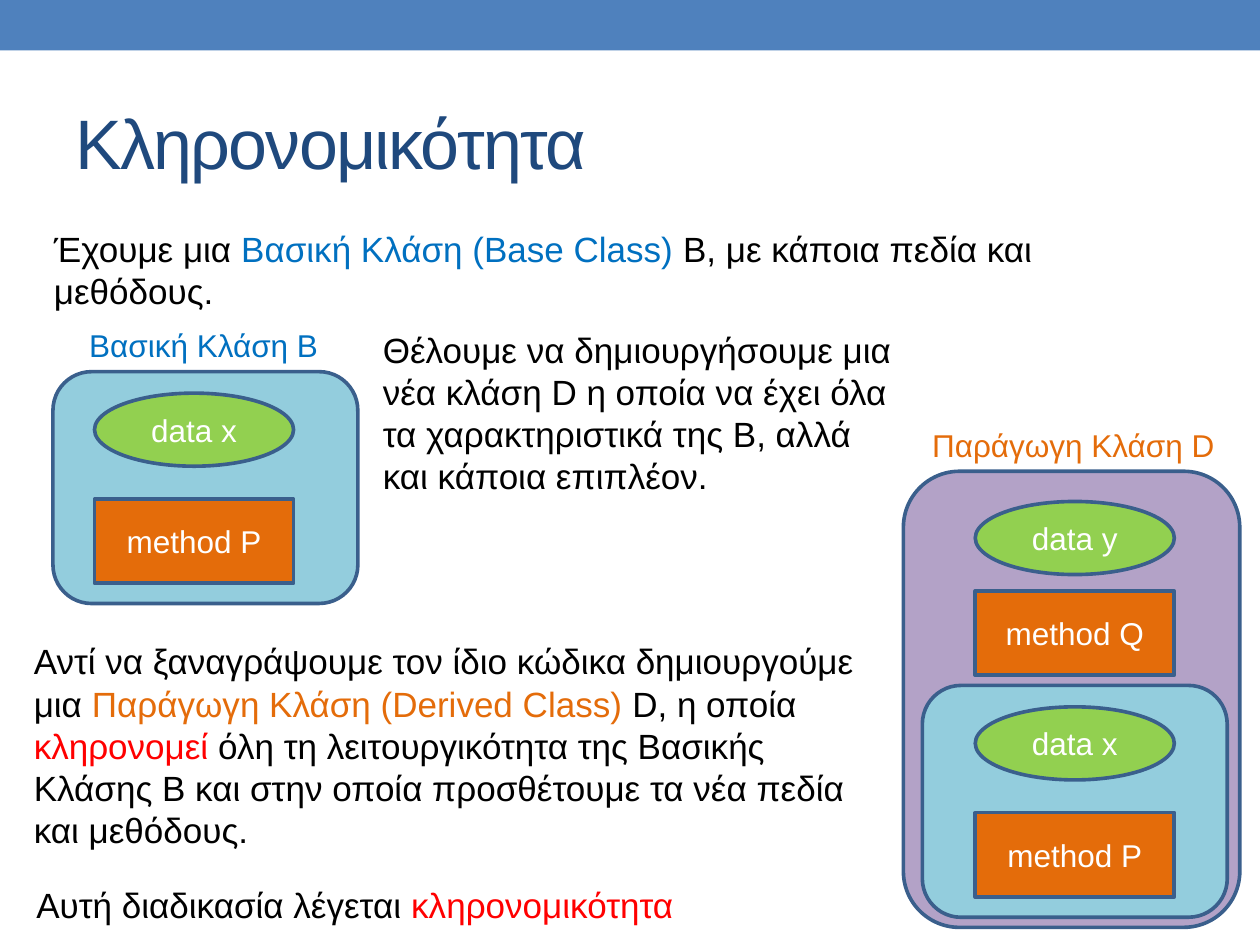
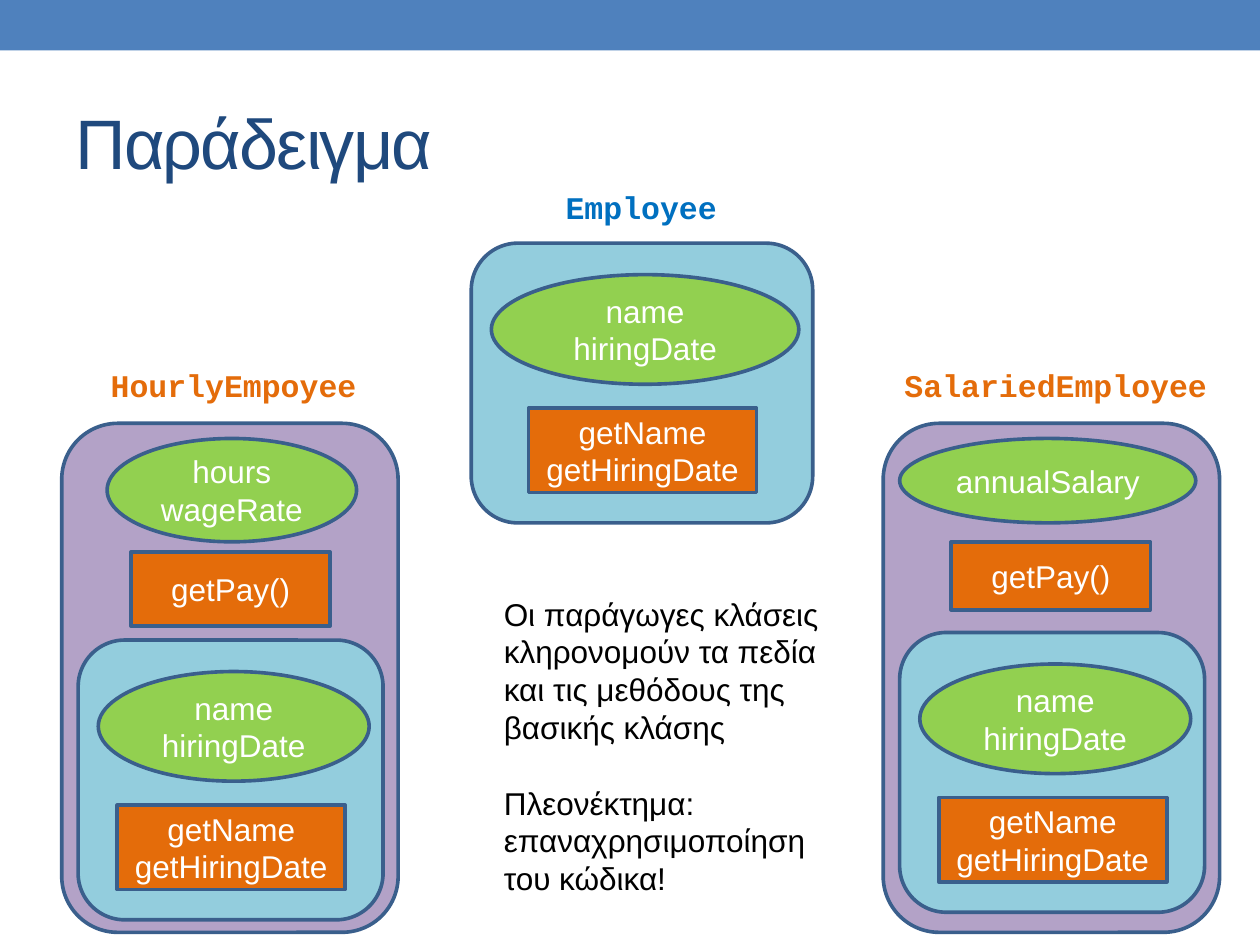
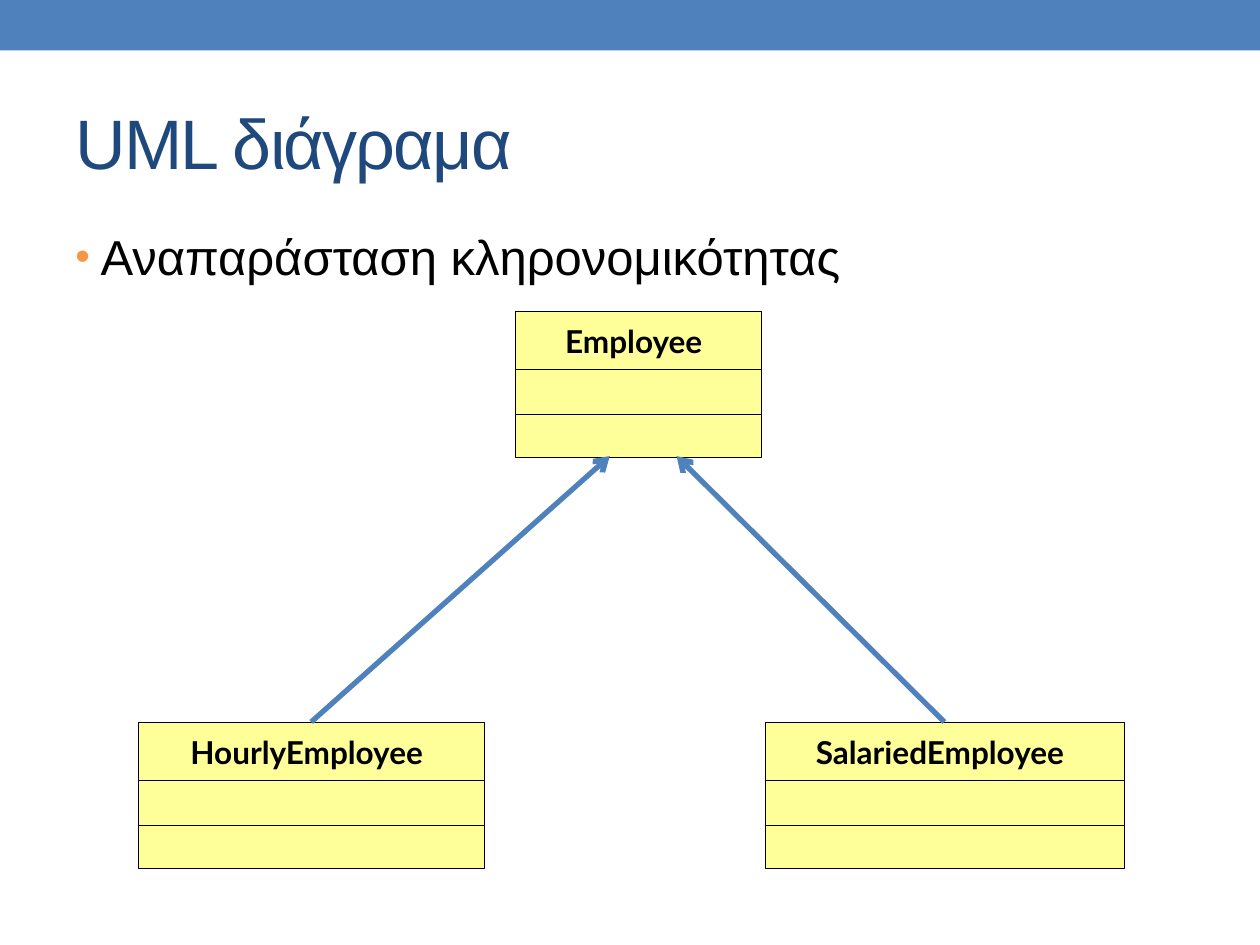
from lxml import etree
from pptx import Presentation
from pptx.dml.color import RGBColor
from pptx.enum.shapes import MSO_CONNECTOR, MSO_SHAPE
from pptx.enum.text import MSO_ANCHOR, PP_ALIGN
from pptx.oxml.ns import qn
from pptx.util import Inches, Pt

RECT, ROUND, OVAL = MSO_SHAPE.RECTANGLE, MSO_SHAPE.ROUNDED_RECTANGLE, MSO_SHAPE.OVAL
STRAIGHT = MSO_CONNECTOR.STRAIGHT
TOP, MIDDLE = MSO_ANCHOR.TOP, MSO_ANCHOR.MIDDLE
LEFT, CENTER = PP_ALIGN.LEFT, PP_ALIGN.CENTER

COLORS = {
    "band": "4F81BD", "title": "1F497D", "text": "000000", "white": "FFFFFF",
    "base": "93CDDD", "derived": "B3A2C7", "data": "92D050", "method": "E46C0A",
    "edge": "3A5F8C", "blue": "0070C0", "red": "FF0000", "bullet": "F79646",
    "uml": "FFFF99",
}
RGB = {name: RGBColor.from_string(value) for name, value in COLORS.items()}

SHAPES = {
    "band": (RECT, None, 0), "base": (ROUND, "edge", 2.08),
    "derived": (ROUND, "edge", 2.08), "data": (OVAL, "edge", 2.08),
    "method": (RECT, "edge", 2.08), "uml": (RECT, "text", 0.25),
}
BODY = {"name": "Arial", "size": Pt(20), "bold": False}
SMALL = {**BODY, "size": Pt(18)}
TITLE = {**BODY, "size": Pt(40)}
BULLET = {**BODY, "size": Pt(28)}
CODE = {"name": "Courier New", "size": Pt(18), "bold": True}
UML = {**CODE, "name": "Lato"}

prs = Presentation()
prs.slide_width, prs.slide_height = Inches(10), Inches(7.5)
COL, ROW = prs.slide_width / 100, prs.slide_height / 75


def write(sp, paragraphs, font, align=LEFT, anchor=TOP, wrap=True, gap=0):
    tf = sp.text_frame
    tf.word_wrap, tf.vertical_anchor = wrap, anchor
    for i, runs in enumerate(paragraphs):
        p = tf.paragraphs[0] if i == 0 else tf.add_paragraph()
        p.alignment = align
        if i:
            p.space_before = Pt(gap)
        for text, color in runs:
            r = p.add_run()
            r.text = text
            for key, value in font.items():
                setattr(r.font, key, value)
            r.font.color.rgb = RGB[color]
    return tf


def draw(shapes, style, x, y, w, h, lines=()):
    kind, edge, weight = SHAPES[style]
    sp = shapes.add_shape(kind, round(x * COL), round(y * ROW), round(w * COL), round(h * ROW))
    sp.shadow.inherit = False
    sp.fill.solid()
    sp.fill.fore_color.rgb = RGB[style]
    if edge:
        sp.line.color.rgb = RGB[edge]
        sp.line.width = Pt(weight)
    else:
        sp.line.fill.background()
    if lines:
        tf = write(sp, [[(line, "white")] for line in lines], SMALL, CENTER, MIDDLE)
        tf.margin_left = tf.margin_right = Inches(0.05)
    return sp


slides = []
for title in ["Κληρονομικότητα", "Παράδειγμα", "UML διάγραμα"]:
    s = prs.slides.add_slide(prs.slide_layouts[6])
    draw(s.shapes, "band", 0, 0, 100, 4)
    sp = s.shapes.add_textbox(round(5 * COL), round(5.8 * ROW), round(90 * COL), round(10.8 * ROW))
    tf = write(sp, [[(title, "title")]], TITLE, anchor=MIDDLE)
    tf.paragraphs[0].runs[0].font._element.set("spc", "-100")
    slides.append(s)
inherit, example, uml = slides

draw(inherit.shapes, "derived", 71.7, 37.4, 26.7, 36.2)
for x, y, indent in [(4.2, 29.5, 3.3), (73.2, 54.4, 4.2)]:
    draw(inherit.shapes, "base", x, y, 24.2, 18.4)
    draw(inherit.shapes, "data", x + indent, y + 1.7, 15.8, 5.8, ["data x"])
    draw(inherit.shapes, "method", x + indent, y + 10.1, 15.8, 6.7, ["method P"])
draw(inherit.shapes, "data", 77.4, 39.8, 15.8, 5.8, ["data y"])
draw(inherit.shapes, "method", 77.4, 46.9, 15.8, 6.7, ["method Q"])

for x, y, w, h in [(37.4, 19.3, 27.1, 22.2), (6.2, 50.8, 24.2, 22.2), (71.4, 50.2, 24.2, 22.2)]:
    if y > 50:
        draw(example.shapes, "derived", x - 1.3, 33.6, 26.7, 40.4)
    middle = x + w / 2
    draw(example.shapes, "base", x, y, w, h)
    draw(example.shapes, "data", x + 1.6, y + 2.5, w - 2.7, 8.7, ["name", "hiringDate"])
    draw(example.shapes, "method", middle - 9, y + 13.1, 18.1, 6.7, ["getName", "getHiringDate"])
for style, x, y, w, h, lines in [
    ("data", 8.5, 34.8, 19.8, 8.2, ["hours", "wageRate"]),
    ("method", 10.4, 43.8, 15.8, 5.9, ["getPay()"]),
    ("data", 71.4, 34.8, 23.5, 6.7, ["annualSalary"]),
    ("method", 75.5, 43, 15.8, 5.4, ["getPay()"]),
]:
    draw(example.shapes, style, x, y, w, h, lines)

for s, x, y, w, h, font, wrap, paragraphs in [
    (inherit, 3.3, 17.6, 90, 7.8, BODY, True, [[
        ("Έχουμε μια ", "text"), ("Βασική Κλάση (Base Class) ", "blue"),
        ("Β, με κάποια πεδία και μεθόδους.", "text")]]),
    (inherit, 29.4, 25.6, 43.3, 14.5, BODY, True, [[
        ("Θέλουμε να δημιουργήσουμε μια νέα κλάση D η οποία να έχει όλα τα "
         "χαρακτηριστικά της Β, αλλά και κάποια επιπλέον.", "text")]]),
    (inherit, 1.7, 50.3, 68.3, 17.8, BODY, True, [[
        ("Αντί να ξαναγράψουμε τον ίδιο κώδικα δημιουργούμε μια ", "text"),
        ("Παράγωγη Κλάση (Derived Class) ", "method"), ("D, η οποία ", "text"),
        ("κληρονομεί", "red"),
        (" όλη τη λειτουργικότητα της Βασικής Κλάσης Β και στην οποία "
         "προσθέτουμε τα νέα πεδία και μεθόδους.", "text")]]),
    (inherit, 1.9, 69.6, 54.4, 4.4, BODY, False, [[
        ("Αυτή διαδικασία λέγεται ", "text"), ("κληρονομικότητα", "red")]]),
    (inherit, 6.1, 25.4, 20.4, 4, SMALL, False, [[("Βασική Κλάση B", "blue")]]),
    (inherit, 73, 33.3, 24.6, 4, SMALL, False, [[("Παράγωγη Κλάση D", "method")]]),
    (example, 43.9, 14.4, 14.1, 4, CODE, False, [[("Employee", "blue")]]),
    (example, 7.8, 28.6, 21.6, 4, CODE, False, [[("HourlyEmpoyee", "method")]]),
    (example, 70.8, 28.6, 26.1, 4, CODE, False, [[("SalariedEmployee", "method")]]),
    (example, 39, 46.7, 29.1, 25.2, SMALL, True, [
        [("Οι παράγωγες κλάσεις κληρονομούν τα πεδία και τις μεθόδους της βασικής κλάσης", "text")],
        [("Πλεονέκτημα: επαναχρησιμοποίηση του κώδικα!", "text")]]),
]:
    sp = s.shapes.add_textbox(round(x * COL), round(y * ROW), round(w * COL), round(h * ROW))
    write(sp, paragraphs, font, wrap=wrap, gap=21.6)

sp = uml.shapes.add_textbox(round(5 * COL), round(17.5 * ROW), round(90 * COL), round(53.3 * ROW))
tf = write(sp, [[("Αναπαράσταση κληρονομικότητας", "text")]], BULLET)
pPr = tf.paragraphs[0]._p.get_or_add_pPr()
pPr.set("marL", str(Inches(0.2)))
pPr.set("indent", str(-Inches(0.2)))
color = etree.SubElement(pPr, qn("a:buClr"))
etree.SubElement(color, qn("a:srgbClr"), val=COLORS["bullet"])
etree.SubElement(pPr, qn("a:buSzPct"), val="85000")
etree.SubElement(pPr, qn("a:buFont"), typeface="Arial")
etree.SubElement(pPr, qn("a:buChar"), char="•")

boxes, links = {}, []
for name, x, y, w in [
    ("Employee", 40.9, 24.7, 19.5),
    ("SalariedEmployee", 60.7, 57.3, 28.5),
    ("HourlyEmployee", 11, 57.3, 27.4),
]:
    group = uml.shapes.add_group_shape()
    boxes[name] = draw(group.shapes, "uml", x, y, w, 11.6)
    sp = group.shapes.add_textbox(
        round((x + 0.8) * COL), round((y + 0.4) * ROW), round((w - 2.3) * COL), round(4.1 * ROW))
    write(sp, [[(name, "text")]], UML, CENTER)
    for offset in (4.6, 8.2):
        level = round((y + offset) * ROW)
        line = group.shapes.add_connector(STRAIGHT, round(x * COL), level, round((x + w) * COL), level)
        links.append((line, "text", 0.25))

for name, x in [("SalariedEmployee", 53.7), ("HourlyEmployee", 48.4)]:
    line = uml.shapes.add_connector(STRAIGHT, 0, 0, round(x * COL), round(36.2 * ROW))
    line.begin_connect(boxes[name], 0)
    links.append((line, "band", 3))

for line, color, weight in links:
    line.line.color.rgb = RGB[color]
    line.line.width = Pt(weight)
    if color == "band":
        etree.SubElement(line.line._get_or_add_ln(), qn("a:tailEnd"), type="arrow")
    etree.SubElement(line._element.spPr, qn("a:effectLst"))

prs.save("out.pptx")
